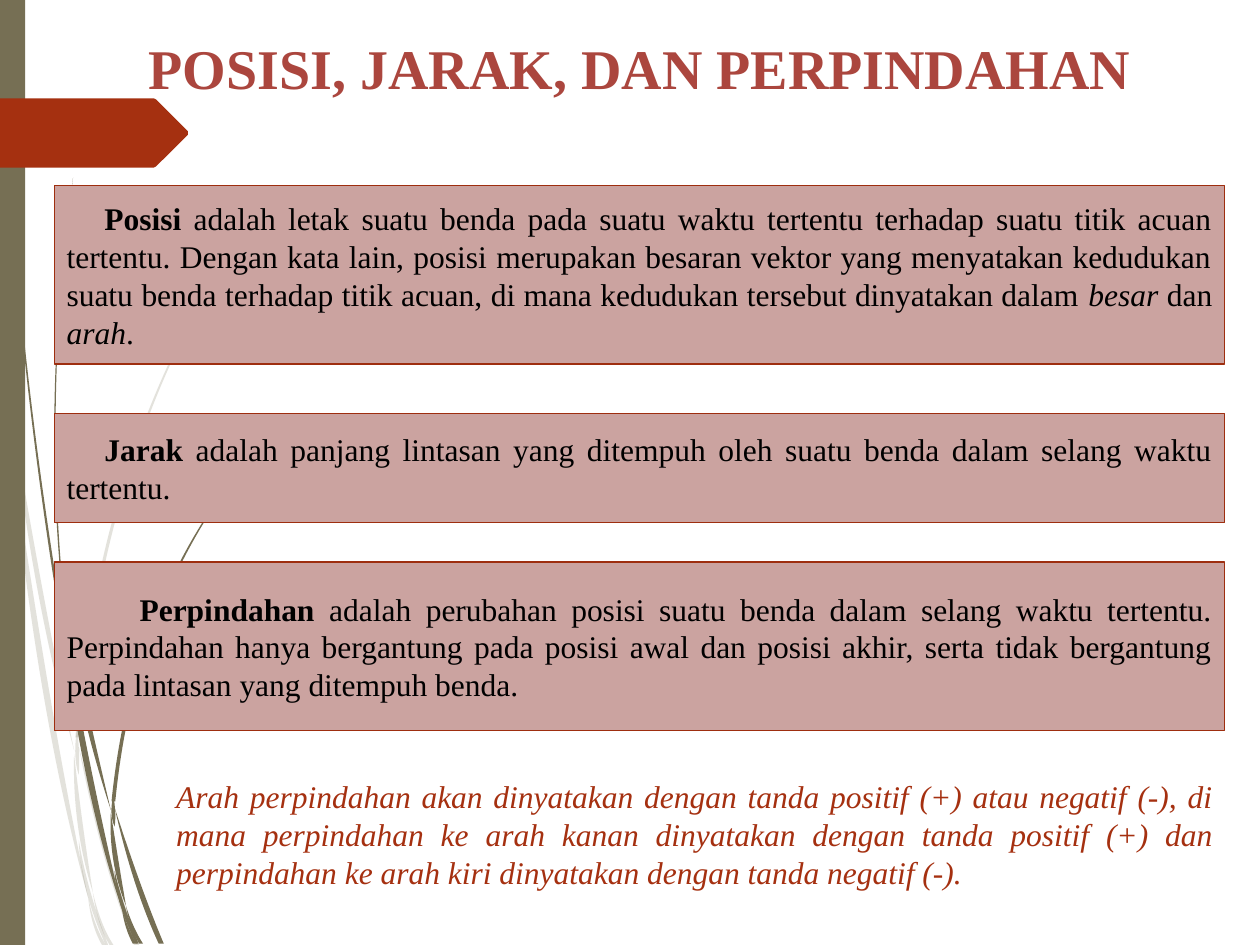
from dataclasses import dataclass, replace

from lxml.etree import SubElement
from pptx import Presentation
from pptx.dml.color import RGBColor
from pptx.enum.shapes import MSO_SHAPE as Preset
from pptx.enum.text import MSO_ANCHOR as Anchor, MSO_AUTO_SIZE as AutoSize, PP_ALIGN as Align
from pptx.oxml.ns import qn
from pptx.util import Emu, Pt

PX = 9144  # EMU per px, 100 px to the inch
SLIDE_WIDTH, SLIDE_HEIGHT = 1000, 750
FONT = "Times New Roman"
COLORS = {
    "olive": "766F54", "rust": "A53010", "rose": "CBA3A0",
    "border": "9E2E0F", "ink": "000000",
}
TITLE_STOPS = {0: "BA706B", 49: "AB463E", 50: "962000", 92: "851D01", 100: "831D01"}

Point = tuple[float, float]


@dataclass
class Run:
    text: str
    bold: bool = False
    italic: bool = False


@dataclass
class Definition:
    top: int
    height: int
    indent: int
    runs: list[Run]


@dataclass
class Blade:
    """A curved grass blade that starts as a point."""
    tip: Point
    middle: Point
    end: Point
    middle_width: int
    end_width: int = 0


DEFINITIONS = [
    Definition(147, 142, 30, [
        Run("Posisi", bold=True),
        Run(" adalah letak suatu benda pada suatu waktu tertentu terhadap suatu titik acuan "
            "tertentu. Dengan kata lain, posisi merupakan besaran vektor yang menyatakan kedudukan "
            "suatu benda terhadap titik acuan, di mana kedudukan tersebut dinyatakan dalam "),
        Run("besar", italic=True), Run(" dan "), Run("arah", italic=True), Run("."),
    ]),
    Definition(328, 87, 30, [
        Run("Jarak", bold=True),
        Run(" adalah panjang lintasan yang ditempuh oleh suatu benda dalam selang waktu tertentu."),
    ]),
    Definition(446, 134, 58, [
        Run("Perpindahan ", bold=True),
        Run("adalah perubahan posisi suatu benda dalam selang waktu tertentu. Perpindahan hanya "
            "bergantung pada posisi awal dan posisi akhir, serta tidak bergantung pada lintasan "
            "yang ditempuh benda."),
    ]),
]
DIRECTION_NOTE = Run(
    "Arah perpindahan akan dinyatakan dengan tanda positif (+) atau negatif (-), di mana "
    "perpindahan ke arah kanan dinyatakan dengan tanda positif (+) dan perpindahan ke arah kiri "
    "dinyatakan dengan tanda negatif (-).", italic=True)

# Both tufts share these blades; the pale tuft stretches them
SHARED_BLADES = [
    Blade((50, 472), (66, 556), (88, 643), 4),
    Blade((91, 641), (109, 700), (128, 749), 4, 4),
    Blade((47, 477), (70, 611), (97, 722), 5),
    Blade((100, 719), (105, 735), (112, 749), 2, 3),
    Blade((215, 344), (130, 475), (90, 636), 2, 3),
    Blade((97, 722), (101, 736), (107, 749), 2, 3),
    Blade((88, 645), (92, 683), (100, 719), 4),
    Blade((90, 631), (90, 645), (91, 656), 3),
    Blade((91, 691), (97, 718), (109, 749), 3, 2),
]
DARK_BLADES = [
    Blade((2, 0), (15, 233), (47, 481), 1, 2),
    Blade((58, 141), (44, 310), (50, 472), 1, 1),
]
PALE_BLADE = Blade((0, 285), (4, 320), (8, 350), 2)
TAG = [(0, 78), (122, 78), (124, 79), (149, 104), (149, 107), (124, 132), (122, 133), (0, 133)]


def color(name: str) -> RGBColor:
    return RGBColor.from_string(COLORS[name])


def box(left: int, top: int, width: int, height: int) -> list[Emu]:
    return [Emu(length * PX) for length in (left, top, width, height)]


def paint(shape, fill: str, border: str | None = None) -> None:
    shape.shadow.inherit = False
    shape.fill.solid()
    shape.fill.fore_color.rgb = color(fill)
    if border:
        shape.line.color.rgb = color(border)
        shape.line.width = Pt(0.75)
    else:
        shape.line.fill.background()


def draw_outline(shapes, points: list[Point], fill: str):
    start, *others = [(x * PX, y * PX) for x, y in points]
    builder = shapes.build_freeform(*start)
    builder.add_line_segments(others, close=True)
    shape = builder.convert_to_shape()
    paint(shape, fill)
    return shape


def stretch(point: Point) -> Point:
    x, y = point
    return 8 + (x - 47) * 1.24, min(350 + (y - 477) * 1.48, SLIDE_HEIGHT)


def edge(blade: Blade, side: float) -> list[Point]:
    """Bezier points of the edge that lies at side (-0.5 or 0.5) of the blade's width."""
    middle = (blade.middle[0] + side * blade.middle_width, blade.middle[1])
    end = (blade.end[0] + side * blade.end_width, blade.end[1])
    pull = [2 * m - (t + e) / 2 for t, m, e in zip(blade.tip, middle, end)]
    handles = [tuple((c + 2 * p) / 3 for c, p in zip(corner, pull)) for corner in (blade.tip, end)]
    return [blade.tip, *handles, end]


def draw_blade(shapes, blade: Blade, opacity: int) -> None:
    left, right = edge(blade, -0.5), edge(blade, 0.5)
    shape = draw_outline(shapes, right + [left[-1]] * 3 + left[-2::-1], "olive")
    # Every three line points become one Bezier curve
    lines = shape._element.xpath(".//a:lnTo")
    for first, second, third in zip(lines[::3], lines[1::3], lines[2::3]):
        first.tag = qn("a:cubicBezTo")
        for line in (second, third):
            first.append(line[0])
            line.getparent().remove(line)
    if opacity < 100:
        tint = shape._element.xpath("./p:spPr/a:solidFill/a:srgbClr")[0]
        SubElement(tint, qn("a:alpha"), val=str(opacity * 1000))


def write(shape, runs: list[Run], size: int, ink: str, align: Align, indent: int = 0) -> None:
    shape.text_frame.word_wrap = True
    paragraph = shape.text_frame.paragraphs[0]
    paragraph.alignment = align
    if indent:
        paragraph._p.get_or_add_pPr().set("indent", str(indent * PX))
    for part in runs:
        run = paragraph.add_run()
        run.text = part.text
        font = run.font
        font.name, font.size, font.bold, font.italic = FONT, Pt(size), part.bold, part.italic
        font.color.rgb = color(ink)


def grade_title(title) -> None:
    properties = title.text_frame.paragraphs[0].runs[0]._r.rPr
    gradient = properties.makeelement(qn("a:gradFill"))
    stops = SubElement(gradient, qn("a:gsLst"))
    for percent, shade in TITLE_STOPS.items():
        stop = SubElement(stops, qn("a:gs"), pos=str(percent * 1000))
        SubElement(stop, qn("a:srgbClr"), val=shade)
    SubElement(gradient, qn("a:lin"), ang="5400000")
    properties.replace(properties.find(qn("a:solidFill")), gradient)


def main() -> None:
    deck = Presentation()
    deck.slide_width, deck.slide_height = Emu(SLIDE_WIDTH * PX), Emu(SLIDE_HEIGHT * PX)
    shapes = deck.slides.add_slide(deck.slide_layouts[6]).shapes

    # Grass, side band and tag
    pale_blades = [PALE_BLADE] + [
        replace(blade, tip=stretch(blade.tip), middle=stretch(blade.middle), end=stretch(blade.end))
        for blade in SHARED_BLADES]
    for blades, opacity in ((pale_blades, 20), (DARK_BLADES + SHARED_BLADES, 100)):
        tuft = shapes.add_group_shape()
        for blade in blades:
            draw_blade(tuft.shapes, blade, opacity)
    paint(shapes.add_shape(Preset.RECTANGLE, *box(0, 0, 20, SLIDE_HEIGHT)), "olive")
    draw_outline(shapes, TAG, "rust")

    # Title
    title = shapes.add_textbox(*box(67, 22, 882, 64))
    write(title, [Run("POSISI, JARAK, DAN PERPINDAHAN", bold=True)], 32, "rust", Align.CENTER)
    title.text_frame.auto_size = AutoSize.SHAPE_TO_FIT_TEXT
    grade_title(title)

    # Definitions
    for item in DEFINITIONS:
        panel = shapes.add_shape(Preset.RECTANGLE, *box(43, item.top, 929, item.height))
        paint(panel, "rose", "border")
        panel.text_frame.vertical_anchor = Anchor.MIDDLE
        write(panel, item.runs, 18, "ink", Align.JUSTIFY, item.indent)

    # Note on direction
    note = shapes.add_textbox(*box(130, 595, 843, 134))
    note.text_frame.vertical_anchor = Anchor.MIDDLE
    write(note, [DIRECTION_NOTE], 18, "rust", Align.JUSTIFY)

    deck.save("out.pptx")


if __name__ == "__main__":
    main()
